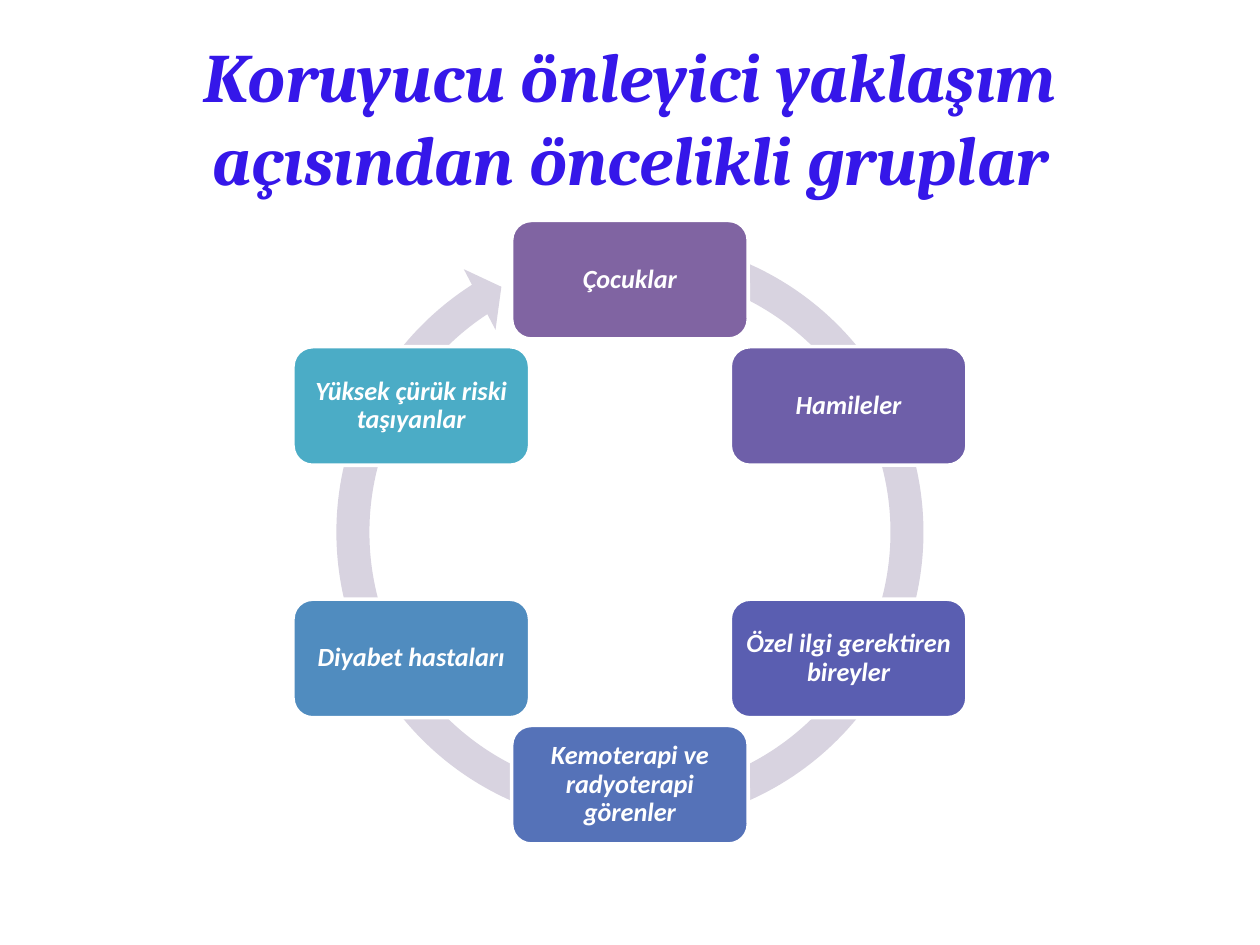
import math
from dataclasses import dataclass

from pptx import Presentation
from pptx import util as u
from pptx.dml.color import RGBColor
from pptx.enum import shapes, text


@dataclass(frozen=True)
class Theme:
    background: str = "FFFFFF"
    heading: str = "3517E9"
    ring: str = "D8D3E0"
    label: str = "FFFFFF"
    heading_font: str = "Cambria"
    label_font: str = "Calibri"
    heading_size: float = 39.6
    label_size: float = 15
    outline: float = 2


def write(frame, content, *, font, size, color, spacing=None, inset=None):
    frame.word_wrap = True
    frame.auto_size = text.MSO_AUTO_SIZE.NONE
    frame.vertical_anchor = text.MSO_ANCHOR.MIDDLE
    if inset is not None:
        frame.margin_left = frame.margin_right = u.Cm(inset)
        frame.margin_top = frame.margin_bottom = u.Cm(inset)
    paragraph = frame.paragraphs[0]
    paragraph.alignment = text.PP_ALIGN.CENTER
    if spacing is not None:
        paragraph.line_spacing = spacing
    words = paragraph.add_run()
    words.text = content
    words.font.name = font
    words.font.size = u.Pt(size)
    words.font.bold = words.font.italic = True
    words.font.color.rgb = RGBColor.from_string(color)


class CycleSlide:
    def __init__(self, deck, theme):
        self.theme = theme
        self.slide = deck.slides.add_slide(deck.slide_layouts[5])
        backdrop = self.slide.background.fill
        backdrop.solid()
        backdrop.fore_color.rgb = RGBColor.from_string(theme.background)

    def heading(self, content, left, top, width, height):
        heading = self.slide.shapes.title
        heading.left, heading.top = u.Cm(left), u.Cm(top)
        heading.width, heading.height = u.Cm(width), u.Cm(height)
        write(heading.text_frame, content, font=self.theme.heading_font,
              size=self.theme.heading_size, color=self.theme.heading)

    def centred(self, kind, x, y, width, height, color):
        figure = self.slide.shapes.add_shape(
            kind, u.Cm(x - width / 2), u.Cm(y - height / 2),
            u.Cm(width), u.Cm(height))
        figure.shadow.inherit = False
        figure.fill.solid()
        figure.fill.fore_color.rgb = RGBColor.from_string(color)
        return figure

    def ring(self, x, y, diameter):
        ring = self.centred(shapes.MSO_SHAPE.CIRCULAR_ARROW, x, y,
                            diameter, diameter, self.theme.ring)
        ring.line.fill.background()
        for index, value in enumerate((0.053, 3.126, 142.288, 171.266, 0.055)):
            ring.adjustments[index] = value

    def group(self, content, x, y, width, height, color):
        group = self.centred(shapes.MSO_SHAPE.ROUNDED_RECTANGLE, x, y,
                             width, height, color)
        group.line.color.rgb = RGBColor.from_string(self.theme.background)
        group.line.width = u.Pt(self.theme.outline)
        write(group.text_frame, content, font=self.theme.label_font,
              size=self.theme.label_size, color=self.theme.label,
              spacing=0.9, inset=0.04)


PRIORITY_GROUPS = [
    ("Çocuklar", "8064A2"),
    ("Hamileler", "6E5FA9"),
    ("Özel ilgi gerektiren bireyler", "5A5EB1"),
    ("Kemoterapi ve radyoterapi görenler", "5572B8"),
    ("Diyabet hastaları", "508CBF"),
    ("Yüksek çürük riski taşıyanlar", "4BACC6"),
]
CENTRE_X, CENTRE_Y, RADIUS = 12.7, 10.73, 5.09


def main():
    deck = Presentation()
    deck.slide_width, deck.slide_height = u.Cm(25.4), u.Cm(19.05)
    cycle = CycleSlide(deck, Theme())
    cycle.heading("Koruyucu önleyici yaklaşım açısından öncelikli gruplar",
                  1.27, 0.76, 22.86, 3.18)
    cycle.ring(CENTRE_X, CENTRE_Y, 12.55)
    for index, (label, color) in enumerate(PRIORITY_GROUPS):
        angle = math.tau * index / len(PRIORITY_GROUPS)
        cycle.group(label, CENTRE_X + RADIUS * math.sin(angle),
                    CENTRE_Y - RADIUS * math.cos(angle), 4.77, 2.39, color)
    deck.save("out.pptx")


if __name__ == "__main__":
    main()
